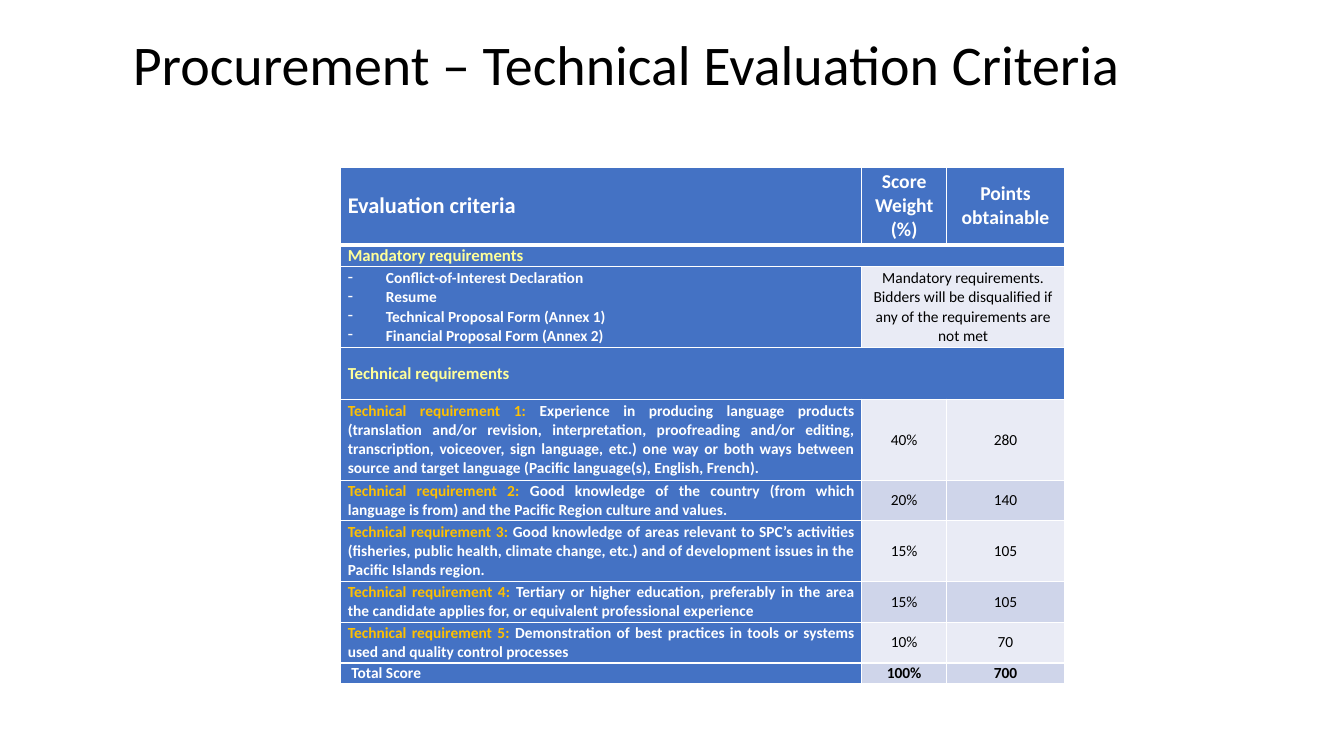
from pptx import Presentation
from pptx.dml.color import RGBColor as RGB
from pptx.enum.text import MSO_ANCHOR as Anchor, PP_ALIGN as Align
from pptx.oxml import parse_xml
from pptx.oxml.ns import nsdecls
from pptx.util import Pt

# Content
TITLE = "Procurement – Technical Evaluation Criteria"
HEAD = ("Evaluation criteria", "Score Weight (%)", "Points obtainable")
MUST = "Mandatory requirements"
DOCS = (
    "Conflict-of-Interest Declaration",
    "Resume",
    "Technical Proposal Form (Annex 1)",
    "Financial Proposal Form (Annex 2)",
)
RULE = ("Mandatory requirements. Bidders will be disqualified if any of "
        "the requirements are not met")
TECH = "Technical requirements"
NEEDS = (
    ("Experience in producing language products (translation and/or revision, "
     "interpretation, proofreading and/or editing, transcription, voiceover, "
     "sign language, etc.) one way or both ways between source and target "
     "language (Pacific language(s), English, French).", "40%", "280"),
    ("Good knowledge of the country (from which language is from) and the "
     "Pacific Region culture and values.", "20%", "140"),
    ("Good knowledge of areas relevant to SPC’s activities (fisheries, public "
     "health, climate change, etc.) and of development issues in the Pacific "
     "Islands region.", "15%", "105"),
    ("Tertiary or higher education, preferably in the area the candidate "
     "applies for, or equivalent professional experience", "15%", "105"),
    ("Demonstration of best practices in tools or systems used and quality "
     "control processes", "10%", "70"),
)
TOTAL = ("Total Score", "100%", "700")

# Theme and layout, in points
THEME = {
    "font": "Calibri", "title": 40, "lead": 16, "head": 14, "band": 12, "body": 11,
    "black": "000000", "white": "FFFFFF", "blue": "4472C4", "pale": "E9EBF5",
    "mid": "CFD5EA", "cream": "FFFF99", "gold": "FFC000",
}
COLS = (372.2, 60.5, 84.3)
ROWS = (55.4, 15.6, 57.9, 36.8, 57.9, 29, 43.5, 29, 29, 14.5)
LEFT, TOP = 243.4, 119.5
PAD, DENT = 5.04, 27.2


def put(para, text, size, color, bold=True):
    run = para.add_run()
    run.text = text
    look = {"name": THEME["font"], "size": Pt(THEME[size]), "bold": bold}
    for key, val in look.items():
        setattr(run.font, key, val)
    run.font.color.rgb = RGB.from_string(THEME[color])


def edge(cell, side, width):
    cell._tc.get_or_add_tcPr().append(parse_xml(
        f'<a:ln{side} {nsdecls("a")} w="{Pt(width)}"><a:solidFill>'
        f'<a:srgbClr val="{THEME["white"]}"/></a:solidFill></a:ln{side}>'))


def shift(para, left, first=0):
    props = para._p.get_or_add_pPr()
    props.set("marL", str(Pt(left)))
    props.set("indent", str(Pt(first)))
    return props


def fill(row, col, parts, tone="blue", align=Align.JUSTIFY):
    cell = grid.cell(row, col)
    cell.fill.solid()
    cell.fill.fore_color.rgb = RGB.from_string(THEME[tone])
    para = cell.text_frame.paragraphs[0]
    para.alignment = align
    for part in parts:
        put(para, *part)
    return para


# Slide and title
deck = Presentation()
deck.slide_width, deck.slide_height = Pt(960), Pt(540)
page = deck.slides.add_slide(deck.slide_layouts[6])
box = page.shapes.add_textbox(Pt(87.8), Pt(7.9), Pt(828), Pt(64.8))
frame = box.text_frame
frame.word_wrap = True
frame.vertical_anchor = Anchor.BOTTOM
put(frame.paragraphs[0], TITLE, "title", "black", False)

# Table grid
grid = page.shapes.add_table(len(ROWS), len(COLS), Pt(LEFT), Pt(TOP),
                             Pt(sum(COLS)), Pt(sum(ROWS))).table
for col, width in zip(grid.columns, COLS):
    col.width = Pt(width)
for row, height in zip(grid.rows, ROWS):
    row.height = Pt(height)
FORM = {
    "margin_left": Pt(PAD), "margin_right": Pt(PAD), "margin_top": 0,
    "margin_bottom": 0, "vertical_anchor": Anchor.MIDDLE,
}
for num in range(len(ROWS)):
    for col in range(len(COLS)):
        cell = grid.cell(num, col)
        for key, val in FORM.items():
            setattr(cell, key, val)
        for side in "LRTB":
            thick = (num, side) in ((0, "B"), (1, "T"))
            edge(cell, side, 3 if thick else 1)
for num, start in ((1, 0), (2, 1), (3, 0)):
    grid.cell(num, start).merge(grid.cell(num, 2))

# Header and section bands
for col, text in enumerate(HEAD):
    fill(0, col, [(text, "head" if col else "lead", "white")],
         align=Align.CENTER if col else Align.JUSTIFY)
fill(1, 0, [(MUST, "band", "cream")])
fill(3, 0, [(TECH, "band", "cream")], align=Align.LEFT)

# Mandatory documents
para = fill(2, 0, [])
for num, text in enumerate(DOCS):
    if num:
        para = grid.cell(2, 0).text_frame.add_paragraph()
        para.alignment = Align.JUSTIFY
    shift(para, DENT, -DENT).append(
        parse_xml(f'<a:buChar {nsdecls("a")} char="-"/>'))
    put(para, text, "body", "white")
fill(2, 1, [(RULE, "body", "black", False)], "pale", Align.CENTER)

# Technical requirements and total
lines = [([(f"Technical requirement {num}: ", "body", "gold"),
           (text, "body", "white")], marks)
         for num, (text, *marks) in enumerate(NEEDS, 1)]
lines.append(([(TOTAL[0], "body", "white")], TOTAL[1:]))
for num, (parts, marks) in enumerate(lines):
    last = num == len(NEEDS)
    para = fill(4 + num, 0, parts)
    if last:
        shift(para, 2.5)
    for col, mark in enumerate(marks, 1):
        fill(4 + num, col, [(mark, "body", "black", last)],
             "mid" if num % 2 else "pale", Align.CENTER)

deck.save("out.pptx")
